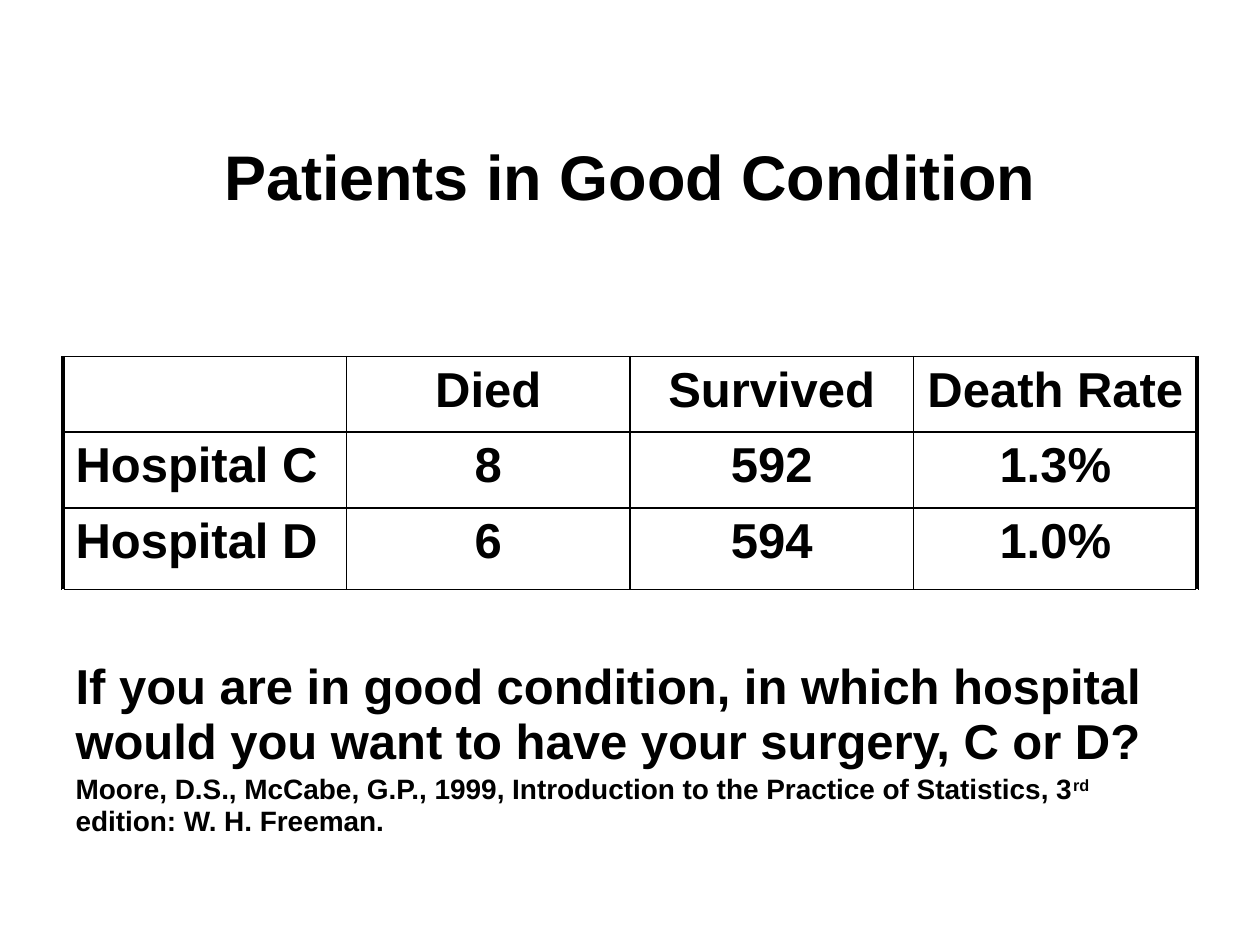
from lxml import etree
from pptx import Presentation
from pptx.dml.color import RGBColor
from pptx.enum.text import MSO_ANCHOR, PP_ALIGN
from pptx.oxml.ns import qn
from pptx.util import Inches, Pt

BOTTOM, TOP = MSO_ANCHOR.BOTTOM, MSO_ANCHOR.TOP
CENTER, LEFT = PP_ALIGN.CENTER, PP_ALIGN.LEFT
COLORS = {"ink": "000000"}
FONT = "Arial"
BLANK_LAYOUT = 6
THIN, THICK = 1, 2.25

COLUMN_WIDTH = 2.25
ROW_HEIGHTS = [2.33, 0.6, 0.6, 0.65, 2.03]
RESULTS = [
    ["", "Died", "Survived", "Death Rate"],
    ["Hospital C", "8", "592", "1.3%"],
    ["Hospital D", "6", "594", "1.0%"],
]
QUESTION = ("If you are in good condition, in which hospital would you want "
            "to have your surgery, C or D?")
CITATION = ("Moore, D.S., McCabe, G.P., 1999, Introduction to the Practice "
            "of Statistics, 3")


def add_text(p, text, size=28, align=LEFT, superscript=False):
    p.alignment = align
    r = p.add_run()
    r.text = text
    r.font.name = FONT
    r.font.size = Pt(size)
    r.font.bold = True
    r.font.color.rgb = RGBColor.from_string(COLORS["ink"])
    if superscript:
        r.font._element.set("baseline", "30000")


def set_borders(cell, **widths):
    """Draw the given sides (L, R, T, B), widths in points."""
    tc_pr = cell._tc.get_or_add_tcPr()
    for side in "LRTB":
        if side in widths:
            ln = etree.SubElement(tc_pr, qn(f"a:ln{side}"),
                                  w=str(Pt(widths[side])))
            fill = etree.SubElement(ln, qn("a:solidFill"))
            etree.SubElement(fill, qn("a:srgbClr"), val=COLORS["ink"])


class SlideBuilder:
    def __init__(self, prs):
        self.slide = prs.slides.add_slide(prs.slide_layouts[BLANK_LAYOUT])

    def table(self, left, top, column_widths, row_heights):
        frame = self.slide.shapes.add_table(
            len(row_heights), len(column_widths), Inches(left), Inches(top),
            Inches(sum(column_widths)), Inches(sum(row_heights)))
        table = frame.table
        table.first_row = table.horz_banding = False
        for column, width in zip(table.columns, column_widths):
            column.width = Inches(width)
        for row, height in zip(table.rows, row_heights):
            row.height = Inches(height)
        return table

    def results(self, table, rows, first_row):
        last = len(rows[0]) - 1
        for i, values in enumerate(rows, first_row):
            for j, value in enumerate(values):
                cell = table.cell(i, j)
                set_borders(cell, L=THIN if j else THICK,
                            R=THICK if j == last else THIN, T=THIN, B=THIN)
                cell.fill.background()
                if value:
                    add_text(cell.text_frame.paragraphs[0], value,
                             align=CENTER if j else LEFT)

    def full_row(self, table, row, anchor, **borders):
        """Merge a row into one cell and return it."""
        last = len(table.columns) - 1
        for j in range(last + 1):
            set_borders(table.cell(row, j), **borders)
            table.cell(row, j).fill.background()
        cell = table.cell(row, 0)
        cell.merge(table.cell(row, last))
        cell.vertical_anchor = anchor
        return cell


def main():
    prs = Presentation()
    prs.slide_width, prs.slide_height = Inches(10), Inches(7.5)
    builder = SlideBuilder(prs)
    table = builder.table(0.5, 0.5, [COLUMN_WIDTH] * 4, ROW_HEIGHTS)

    heading = builder.full_row(table, 0, BOTTOM, B=THIN)
    heading.margin_bottom = Inches(1.13)
    add_text(heading.text_frame.paragraphs[0], "Patients in Good Condition",
             size=36, align=CENTER)

    builder.results(table, RESULTS, first_row=1)

    closing = builder.full_row(table, len(ROW_HEIGHTS) - 1, TOP, T=THIN)
    closing.margin_top = Inches(0.56)
    tf = closing.text_frame
    add_text(tf.paragraphs[0], QUESTION)
    p = tf.add_paragraph()
    p.space_before = Pt(3)
    add_text(p, CITATION, size=16)
    add_text(p, "rd", size=16, superscript=True)
    add_text(p, " edition: W. H. Freeman.", size=16)

    prs.save("out.pptx")


if __name__ == "__main__":
    main()
